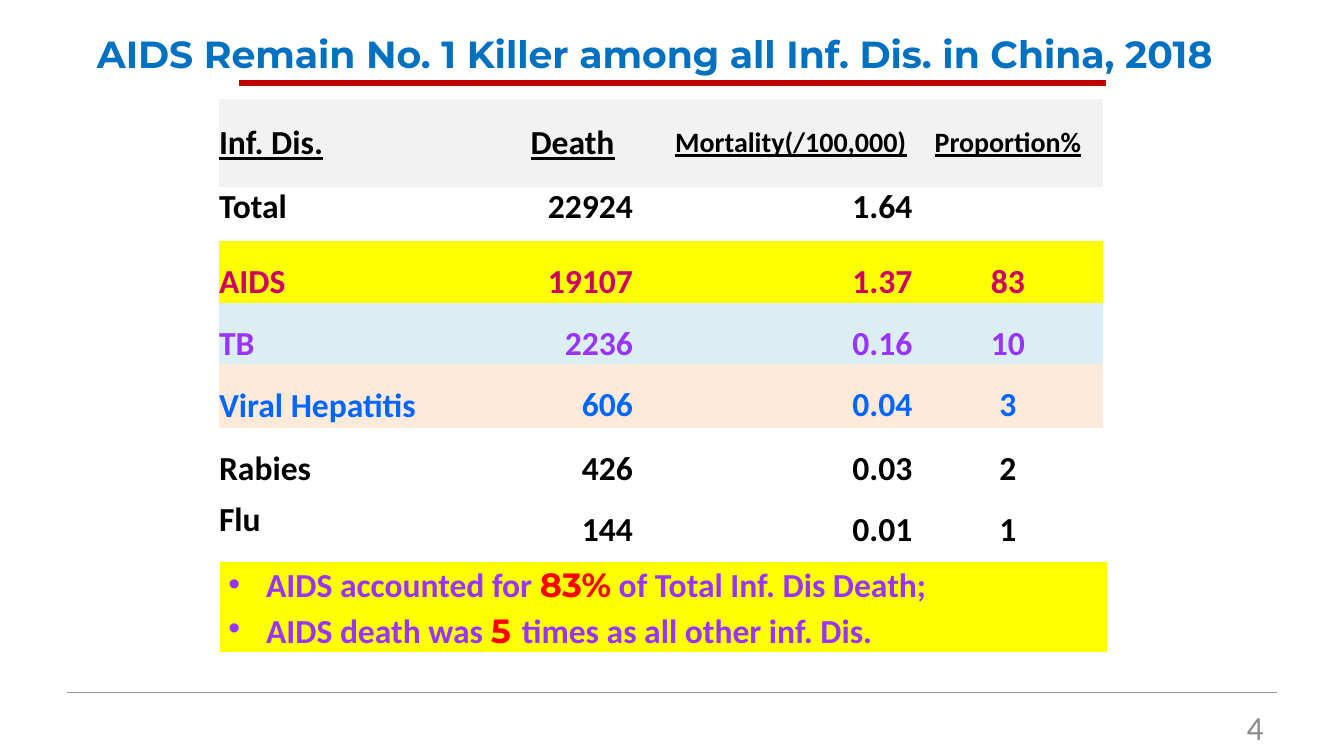
from typing import NamedTuple, Optional

from lxml import etree
from pptx import Presentation
from pptx import util as u
from pptx.dml.color import RGBColor
from pptx.enum import shapes, text
from pptx.oxml.ns import qn

WIDTH = 10
HEIGHT = WIDTH * 9 / 16
BODY_FONT, ACCENT_FONT = "Calibri", "Montserrat"
BLACK, WHITE, YELLOW, PURPLE, RED = "000000", "FFFFFF", "FFFF00", "9933FF", "FF0000"
LEFT, CENTER, RIGHT = text.PP_ALIGN.LEFT, text.PP_ALIGN.CENTER, text.PP_ALIGN.RIGHT
NO_GRID_STYLE = "{2D5ABB26-0587-4C30-8999-92F81FD0307C}"

TABLE_LEFT, TABLE_TOP = 1.63, 0.74
COLUMNS = [2.18, 0.9, 0.27, 1.81, 1.42]
ALIGNMENTS = [LEFT, RIGHT, LEFT, RIGHT, CENTER]
BLANK_TAB = 0.25


class Row(NamedTuple):
    height: float
    values: tuple
    color: str = BLACK
    fill: Optional[str] = None
    spacing: float = 1.5
    label_spacing: float = 1.5


class Span(NamedTuple):
    words: str
    color: str = PURPLE
    font: str = BODY_FONT
    size: float = 18


class Rule(NamedTuple):
    left: float
    right: float
    y: float
    color: str
    weight: float


HEADINGS = Row(0.65, ("Inf. Dis.", "Death", "\t", "Mortality(/100,000)", "Proportion%"),
               fill="F2F2F2", spacing=1, label_spacing=1)
DISEASES = [
    Row(0.3, ("Total", "22924", "", "1.64", ""), spacing=1, label_spacing=1),
    Row(0.1, ("",) * 5),
    Row(0.45, ("AIDS", "19107", "", "1.37", "83"), "CC0066", YELLOW),
    Row(0.45, ("TB", "2236", "", "0.16", "10"), PURPLE, "DBEEF4"),
    Row(0.47, ("Viral Hepatitis", "606", "", "0.04", "3"), "0066FF", "FDEADA"),
    Row(0.45, ("Rabies", "426", "", "0.03", "2")),
    Row(0.45, ("Flu", "144", "", "0.01", "1"), label_spacing=1),
]
FINDINGS = [
    [Span("AIDS accounted for "), Span("83%", RED, ACCENT_FONT),
     Span(" of Total Inf. Dis Death;")],
    [Span("AIDS death was "), Span("5", RED, ACCENT_FONT),
     Span(" ", RED, ACCENT_FONT, 21), Span("times as all other inf. Dis.")],
]
FOOTER_RULE = Rule(0.5, 9.5, 5.15, "959595", 0.25)
TITLE_RULE = Rule(1.78, 8.23, 0.62, "C00000", 3)


def rgb(value: str) -> RGBColor:
    return RGBColor.from_string(value)


def write(paragraph, words: str, *, size: float = 18, font: str = BODY_FONT,
          color: str = BLACK, bold: bool = True, underline: bool = False,
          align=LEFT, spacing: float = 1) -> None:
    """Append one formatted run and set the paragraph's layout."""
    paragraph.alignment = align
    paragraph.line_spacing = spacing
    paragraph.space_before = u.Pt(0)
    run = paragraph.add_run()
    run.text = words
    run.font.size, run.font.name = u.Pt(size), font
    run.font.bold, run.font.underline = bold, underline
    run.font.color.rgb = rgb(color)


def place(shape, left: float, top: float, width: float, height: float) -> None:
    shape.left, shape.top = u.Inches(left), u.Inches(top)
    shape.width, shape.height = u.Inches(width), u.Inches(height)


def frame(shape, fill: str) -> None:
    """Give a placeholder its fill, thin white outline and fixed, centred text."""
    shape.fill.solid()
    shape.fill.fore_color.rgb = rgb(fill)
    shape.line.color.rgb = rgb(WHITE)
    shape.line.width = u.Pt(0.75)
    shape.text_frame.auto_size = text.MSO_AUTO_SIZE.NONE
    shape.text_frame.vertical_anchor = text.MSO_ANCHOR.MIDDLE


def draw_rule(slide, rule: Rule) -> None:
    line = slide.shapes.add_connector(
        shapes.MSO_CONNECTOR.STRAIGHT, u.Inches(rule.left), u.Inches(rule.y),
        u.Inches(rule.right), u.Inches(rule.y))
    line.line.color.rgb = rgb(rule.color)
    line.line.width = u.Pt(rule.weight)
    etree.SubElement(line._element.spPr, qn("a:effectLst"))


def draw_title(slide) -> None:
    title = slide.shapes.title
    place(title, 0, 0.14, 9.74, 0.41)
    frame(title, WHITE)
    write(title.text_frame.paragraphs[0],
          "AIDS Remain No. 1 Killer among all Inf. Dis. in China, 2018",
          size=20.2, font=ACCENT_FONT, color="0070C0", align=CENTER, spacing=1.3)


def fill_cell(cell, row: Row, column: int) -> None:
    cell.margin_left = cell.margin_right = cell.margin_top = cell.margin_bottom = 0
    if row.fill:
        cell.fill.solid()
        cell.fill.fore_color.rgb = rgb(row.fill)
    else:
        cell.fill.background()
    heading = row is HEADINGS
    middle = heading or column == 0
    cell.vertical_anchor = text.MSO_ANCHOR.MIDDLE if middle else text.MSO_ANCHOR.TOP
    paragraph = cell.text_frame.paragraphs[0]
    words = row.values[column]
    if not words:
        paragraph.font.size = u.Pt(4)
        return
    if words == "\t":
        tabs = etree.SubElement(paragraph._p.get_or_add_pPr(), qn("a:tabLst"))
        etree.SubElement(tabs, qn("a:tab"), pos=str(u.Inches(BLANK_TAB)), algn="l")
    centered = heading and column in (1, 3, 4)
    write(paragraph, words, color=row.color, underline=heading,
          size=15 if heading and column > 2 else 18,
          spacing=row.spacing if column else row.label_spacing,
          align=CENTER if centered else ALIGNMENTS[column])


def draw_table(slide) -> None:
    rows = [HEADINGS, *DISEASES]
    table = slide.shapes.add_table(
        len(rows), len(COLUMNS), u.Inches(TABLE_LEFT), u.Inches(TABLE_TOP),
        u.Inches(sum(COLUMNS)), u.Inches(sum(row.height for row in rows))).table
    table.horz_banding = False
    table._tbl.tblPr.find(qn("a:tableStyleId")).text = NO_GRID_STYLE
    for column, width in enumerate(COLUMNS):
        table.columns[column].width = u.Inches(width)
    for index, row in enumerate(rows):
        table.rows[index].height = u.Inches(row.height)
        for column in range(len(COLUMNS)):
            fill_cell(table.cell(index, column), row, column)


def draw_findings(slide) -> None:
    findings = slide.placeholders[1]
    place(findings, TABLE_LEFT, 4.18, 6.61, 0.68)
    frame(findings, YELLOW)
    body = findings.text_frame
    body.margin_left = body.margin_right = u.Inches(0.07)
    body.margin_top = body.margin_bottom = u.Inches(0.04)
    for index, spans in enumerate(FINDINGS):
        paragraph = body.add_paragraph() if index else body.paragraphs[0]
        properties = paragraph._p.get_or_add_pPr()
        properties.set("marL", str(u.Inches(0.28)))
        properties.set("indent", str(-u.Inches(0.28)))
        etree.SubElement(properties, qn("a:buChar"), char="•")
        for span in spans:
            write(paragraph, span.words, size=span.size, font=span.font, color=span.color)


def draw_page_number(slide) -> None:
    number = slide.shapes.add_textbox(0, 0, 0, 0)
    place(number, 7.17, 5.21, 2.33, 0.3)
    number.text_frame.word_wrap = True
    write(number.text_frame.paragraphs[0], "4", color="8C8C8C", bold=False, align=RIGHT)


def main() -> None:
    deck = Presentation()
    deck.slide_width, deck.slide_height = u.Inches(WIDTH), u.Inches(HEIGHT)
    slide = deck.slides.add_slide(deck.slide_layouts[1])
    draw_rule(slide, FOOTER_RULE)
    draw_table(slide)
    draw_title(slide)
    draw_findings(slide)
    draw_page_number(slide)
    draw_rule(slide, TITLE_RULE)
    deck.save("out.pptx")


if __name__ == "__main__":
    main()
